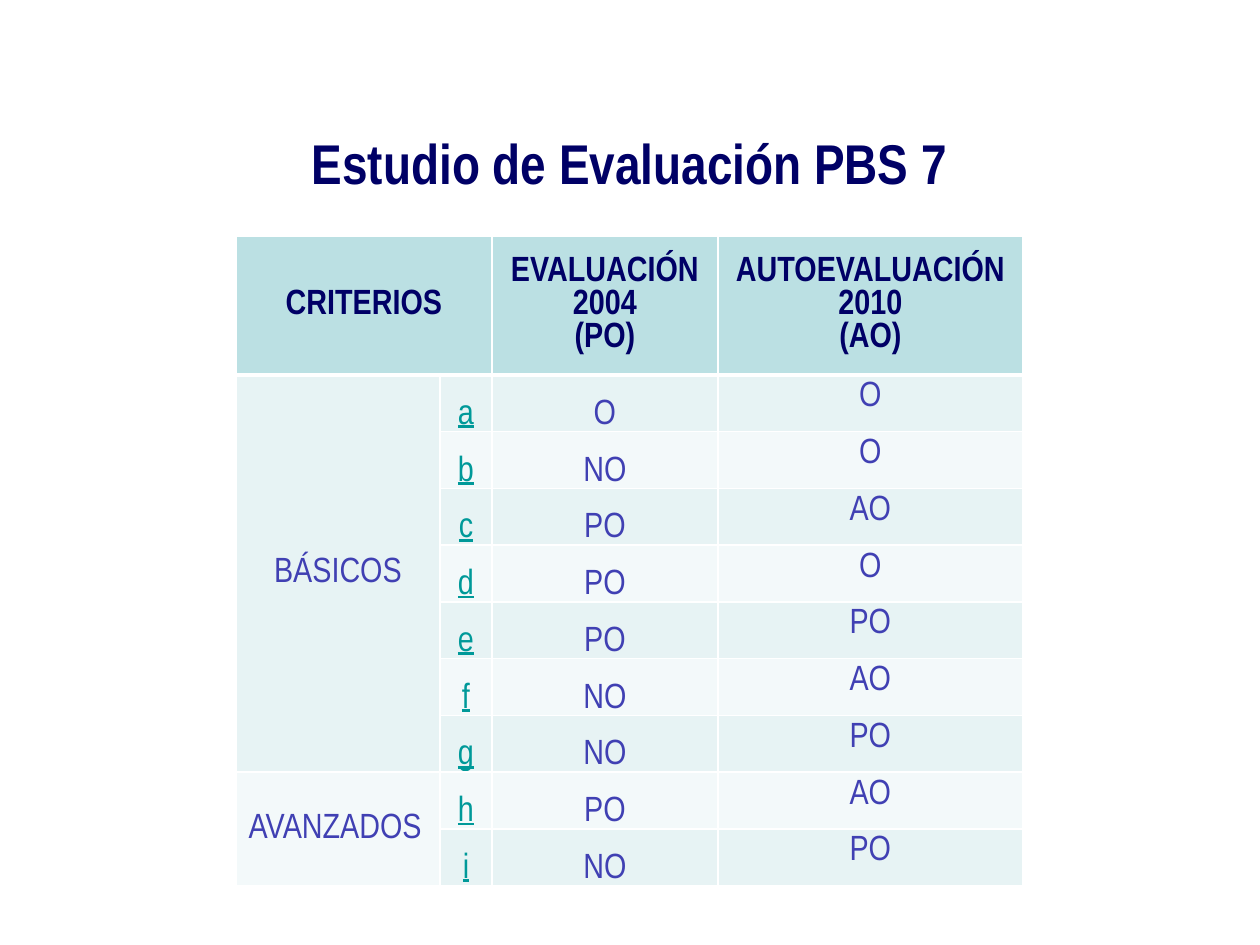
from lxml.etree import SubElement
from pptx import Presentation
from pptx.dml.color import RGBColor
from pptx.enum.text import MSO_ANCHOR, PP_ALIGN
from pptx.oxml.ns import qn
from pptx.util import Emu, Pt

EMU_PER_PX = 914400 / 126
FONT = "Arial Narrow"
NAVY, VIOLET, TEAL, WHITE = "000066", "4040B3", "009999", "FFFFFF"
HEADER_FILL, BANDS = "BBE0E3", ("E7F3F4", "F3F9FA")

HEADERS = [(0, ["CRITERIOS"]),
           (2, ["EVALUACIÓN 2004", "(PO)"]),
           (3, ["AUTOEVALUACIÓN 2010", "(AO)"])]
RATINGS = [("a", "O", "O"), ("b", "NO", "O"), ("c", "PO", "AO"),
           ("d", "PO", "O"), ("e", "PO", "PO"), ("f", "NO", "AO"),
           ("g", "NO", "PO"), ("h", "PO", "AO"), ("i", "NO", "PO")]
# First row, last row, label, alignment
GROUPS = [(1, 7, "BÁSICOS", PP_ALIGN.CENTER),
          (8, 9, "AVANZADOS", PP_ALIGN.LEFT)]

HEADER_TEXT = {"size": Pt(20), "bold": True, "color": NAVY}
BODY_TEXT = {"size": Pt(20), "bold": False, "color": VIOLET}
LETTER_TEXT = {**BODY_TEXT, "color": TEAL, "underline": True}
TIGHT = {"margin_left": Emu(9525), "margin_right": Emu(9525),
         "margin_top": Emu(9525), "margin_bottom": 0,
         "vertical_anchor": MSO_ANCHOR.BOTTOM}
MIDDLE = {"vertical_anchor": MSO_ANCHOR.MIDDLE}


def px(value):
    return Emu(round(value * EMU_PER_PX))


def rgb(color):
    return RGBColor.from_string(color)


def set_all(target, values):
    for name, value in values.items():
        setattr(target, name, value)


def write(tf, lines, style, align=PP_ALIGN.CENTER):
    font_values = {k: v for k, v in style.items() if k != "color"}
    for i, line in enumerate(lines):
        p = tf.paragraphs[0] if i == 0 else tf.add_paragraph()
        p.alignment = align
        r = p.add_run()
        r.text = line
        set_all(r.font, {"name": FONT, **font_values})
        r.font.color.rgb = rgb(style["color"])


def add_title(s, text):
    sp = s.shapes.add_textbox(px(63), px(97), px(1134), px(130))
    tf = sp.text_frame
    set_all(tf, {"word_wrap": True, **MIDDLE})
    write(tf, [text], {"size": Pt(32), "bold": True, "color": NAVY})


def style_cell(cell, fill, top=1, bottom=1):
    # Borders have to come before the fill in the cell properties
    tc_pr = cell._tc.get_or_add_tcPr()
    for side, width in (("L", 1), ("R", 1), ("T", top), ("B", bottom)):
        ln = SubElement(tc_pr, qn(f"a:ln{side}"), w=str(Pt(width)))
        SubElement(SubElement(ln, qn("a:solidFill")), qn("a:srgbClr"), val=WHITE)
    cell.fill.solid()
    cell.fill.fore_color.rgb = rgb(fill)


def fill_cell(cell, lines, style, layout, align=PP_ALIGN.CENTER):
    set_all(cell, layout)
    write(cell.text_frame, lines, style, align)


def add_criteria_table(s):
    widths, header_height, height = (204, 52, 226, 305), 139, 650
    rows = len(RATINGS) + 1
    table = s.shapes.add_table(rows, len(widths), px(236), px(236),
                               px(sum(widths)), px(height)).table
    for column, width in zip(table.columns, widths):
        column.width = px(width)
    for i, row in enumerate(table.rows):
        row.height = px((height - header_height) / len(RATINGS) if i else header_height)
        for cell in row.cells:
            style_cell(cell, BANDS[(i - 1) % 2] if i else HEADER_FILL,
                       top=3 if i == 1 else 1, bottom=1 if i else 3)

    # Header row
    table.cell(0, 0).merge(table.cell(0, 1))
    for column, lines in HEADERS:
        fill_cell(table.cell(0, column), lines, HEADER_TEXT, MIDDLE)

    # Criteria groups
    for first, last, label, align in GROUPS:
        table.cell(first, 0).merge(table.cell(last, 0))
        fill_cell(table.cell(first, 0), [label], BODY_TEXT, MIDDLE, align)

    # Ratings
    columns = ((LETTER_TEXT, TIGHT), (BODY_TEXT, TIGHT), (BODY_TEXT, {}))
    for i, ratings in enumerate(RATINGS, 1):
        for j, (text, (style, layout)) in enumerate(zip(ratings, columns), 1):
            fill_cell(table.cell(i, j), [text], style, layout)


def main():
    prs = Presentation()
    set_all(prs, {"slide_width": px(1260), "slide_height": px(945)})
    s = prs.slides.add_slide(prs.slide_layouts[6])
    add_title(s, "Estudio de Evaluación PBS 7")
    add_criteria_table(s)
    prs.save("out.pptx")


if __name__ == "__main__":
    main()
